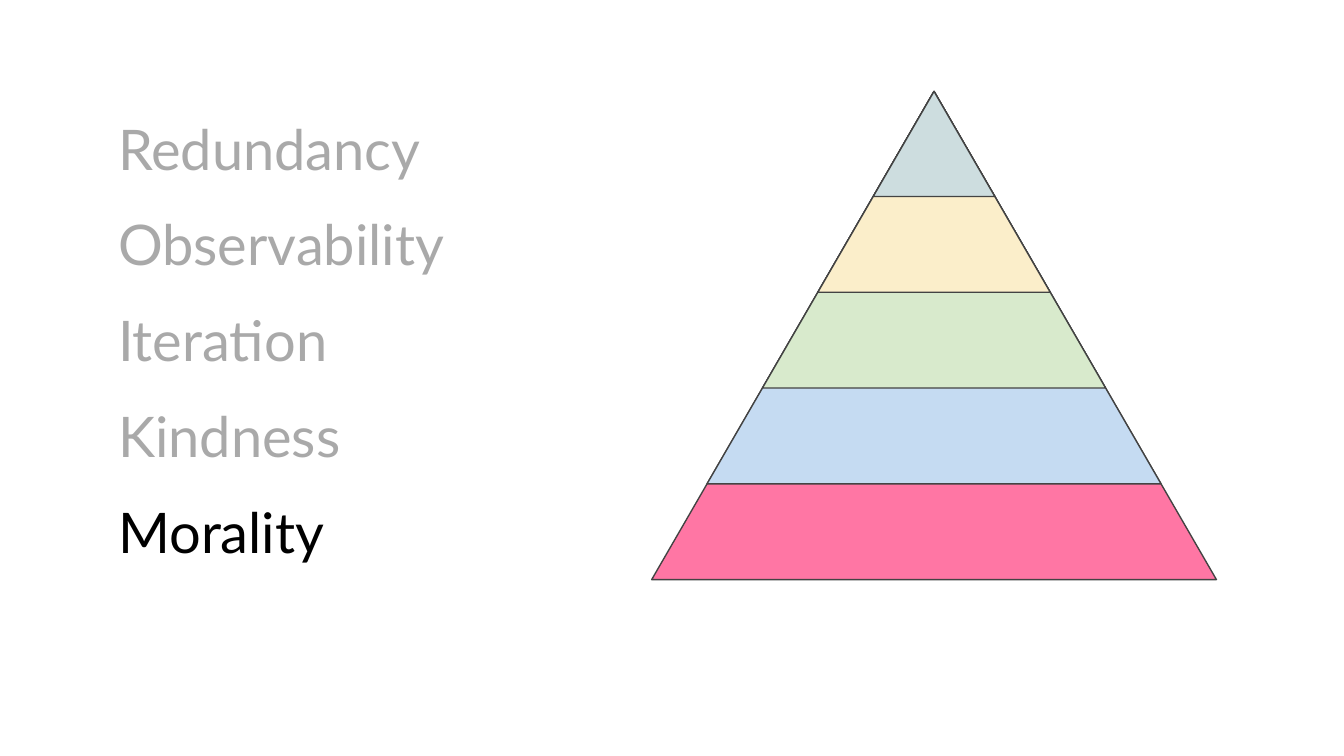
from pptx import Presentation
from pptx.dml.color import RGBColor
from pptx.enum.shapes import MSO_SHAPE as Shape
from pptx.util import Pt


def color(hex_value):
    return RGBColor.from_string(hex_value)


def add_text(slide, text, left, top, width, height, size=30, font="Lato", fill="000000"):
    box = slide.shapes.add_textbox(Pt(left), Pt(top), Pt(width), Pt(height))
    frame = box.text_frame
    frame.word_wrap = True
    frame.margin_left = frame.margin_right = Pt(7.2)
    frame.margin_top = frame.margin_bottom = Pt(7.2)
    paragraph = frame.paragraphs[0]
    run = paragraph.add_run()
    run.text = text
    run.font.size = Pt(size)
    run.font.name = font
    run.font.color.rgb = color(fill)


presentation = Presentation()
presentation.slide_width = Pt(720)
presentation.slide_height = Pt(405)
slide = presentation.slides.add_slide(presentation.slide_layouts[6])

levels = [
    ("Redundancy", "A9A9A9", "CDDDDF"),
    ("Observability", "A9A9A9", "FBEECA"),
    ("Iteration", "A9A9A9", "D8EACC"),
    ("Kindness", "A9A9A9", "C5DBF2"),
    ("Morality", "000000", "FF76A4"),
]
rows_top = 54
row_height = 51.3
apex_x = 500.4
apex_y = 49
width_to_height = 1.157

for row, (label, text_color, _) in enumerate(levels):
    add_text(slide, label, 56.2, rows_top + row * row_height, 214, row_height, fill=text_color)

for row, (_, _, fill_color) in reversed(list(enumerate(levels))):
    height = rows_top + (row + 1) * row_height - apex_y
    width = height * width_to_height
    triangle = slide.shapes.add_shape(
        Shape.ISOSCELES_TRIANGLE, Pt(apex_x - width / 2), Pt(apex_y), Pt(width), Pt(height)
    )
    triangle.shadow.inherit = False
    triangle.fill.solid()
    triangle.fill.fore_color.rgb = color(fill_color)
    triangle.line.color.rgb = color("434343")
    triangle.line.width = Pt(0.75)

presentation.save("out.pptx")
